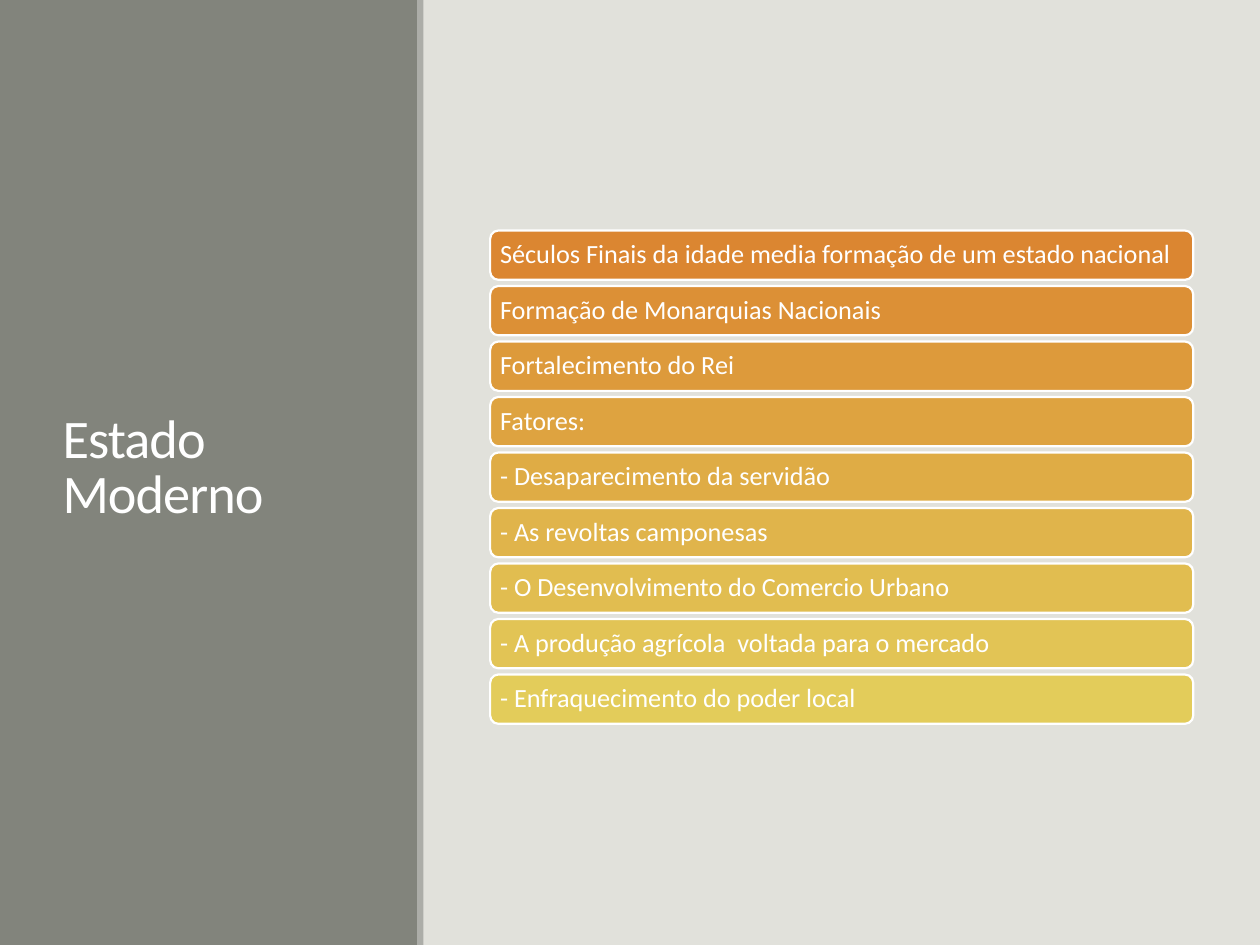
from dataclasses import dataclass

from pptx import Presentation
from pptx.dml.color import RGBColor
from pptx.enum.shapes import MSO_SHAPE
from pptx.enum.text import MSO_ANCHOR, PP_ALIGN
from pptx.util import Inches, Pt


@dataclass(frozen=True)
class Theme:
    """Colours, font and type sizes of the slide."""
    background: str = "E1E1DB"
    panel: str = "82847C"
    divider: str = "ACADA8"
    light: str = "FFFFFF"
    bars: tuple = ("DB8631", "DC9036", "DD9A3B", "DEA340", "DFAC45",
                   "E0B44B", "E1BD50", "E2C455", "E3CC5A")
    font: str = "Calibri"
    title_size: float = 31
    topic_size: float = 15
    outline: float = 1.25


THEME = Theme()
WIDTH, HEIGHT = 10, 7.5
TITLE = "Estado Moderno"
TOPICS = (
    "Séculos Finais da idade media formação de um estado nacional",
    "Formação de Monarquias Nacionais",
    "Fortalecimento do Rei",
    "Fatores:",
    "- Desaparecimento da servidão",
    "- As revoltas camponesas",
    "- O Desenvolvimento do Comercio Urbano",
    "- A produção agrícola  voltada para o mercado",
    "- Enfraquecimento do poder local",
)


def add_block(slide, kind, box, fill, outline=None):
    """Add a flat filled shape, outlined when a colour is given."""
    block = slide.shapes.add_shape(kind, *map(Inches, box))
    block.shadow.inherit = False
    block.fill.solid()
    block.fill.fore_color.rgb = RGBColor.from_string(fill)
    if outline:
        block.line.color.rgb = RGBColor.from_string(outline)
        block.line.width = Pt(THEME.outline)
    else:
        block.line.fill.background()
    return block


def write(frame, wording, size, spacing):
    """Write one left-aligned, vertically centred paragraph."""
    frame.word_wrap = True
    frame.vertical_anchor = MSO_ANCHOR.MIDDLE
    paragraph = frame.paragraphs[0]
    paragraph.alignment = PP_ALIGN.LEFT
    paragraph.line_spacing = spacing
    run = paragraph.add_run()
    run.text = wording
    run.font.name = THEME.font
    run.font.size = Pt(size)
    run.font.color.rgb = RGBColor.from_string(THEME.light)
    return run


def add_title_panel(slide, box):
    """Fill the side panel, with its title and a divider on the right edge."""
    left, top, width, height = box
    add_block(slide, MSO_SHAPE.RECTANGLE, box, THEME.panel)
    title_box = (left + 0.12 * width, top + 0.076 * height,
                 0.762 * width, 0.841 * height)
    title = slide.shapes.add_textbox(*map(Inches, title_box))
    run = write(title.text_frame, TITLE, THEME.title_size, 0.85)
    run.font._element.set("spc", "-50")
    divider_box = (left + width - 0.01, top, 0.05, height)
    add_block(slide, MSO_SHAPE.RECTANGLE, divider_box, THEME.divider)


def add_topic_list(slide, box):
    """Stack the topic bars at an equal pitch down the box."""
    left, top, width, height = box
    bar_height = height / 10
    pitch = (height - bar_height) / (len(TOPICS) - 1)
    for row, (topic, colour) in enumerate(zip(TOPICS, THEME.bars)):
        bar_box = (left, top + row * pitch, width, bar_height)
        bar = add_block(slide, MSO_SHAPE.ROUNDED_RECTANGLE, bar_box,
                        colour, THEME.light)
        frame = bar.text_frame
        frame.margin_left = frame.margin_right = Inches(0.06)
        frame.margin_top = frame.margin_bottom = Inches(0.06)
        write(frame, topic, THEME.topic_size, 0.9)


def main():
    """Build and save the slide."""
    deck = Presentation()
    deck.slide_width, deck.slide_height = Inches(WIDTH), Inches(HEIGHT)
    slide = deck.slides.add_slide(deck.slide_layouts[6])
    slide.background.fill.solid()
    slide.background.fill.fore_color.rgb = RGBColor.from_string(THEME.background)
    add_title_panel(slide, (0, 0, 0.332 * WIDTH, HEIGHT))
    add_topic_list(slide, (0.389 * WIDTH, 0.244 * HEIGHT,
                           0.558 * WIDTH, 0.522 * HEIGHT))
    deck.save("out.pptx")


if __name__ == "__main__":
    main()
